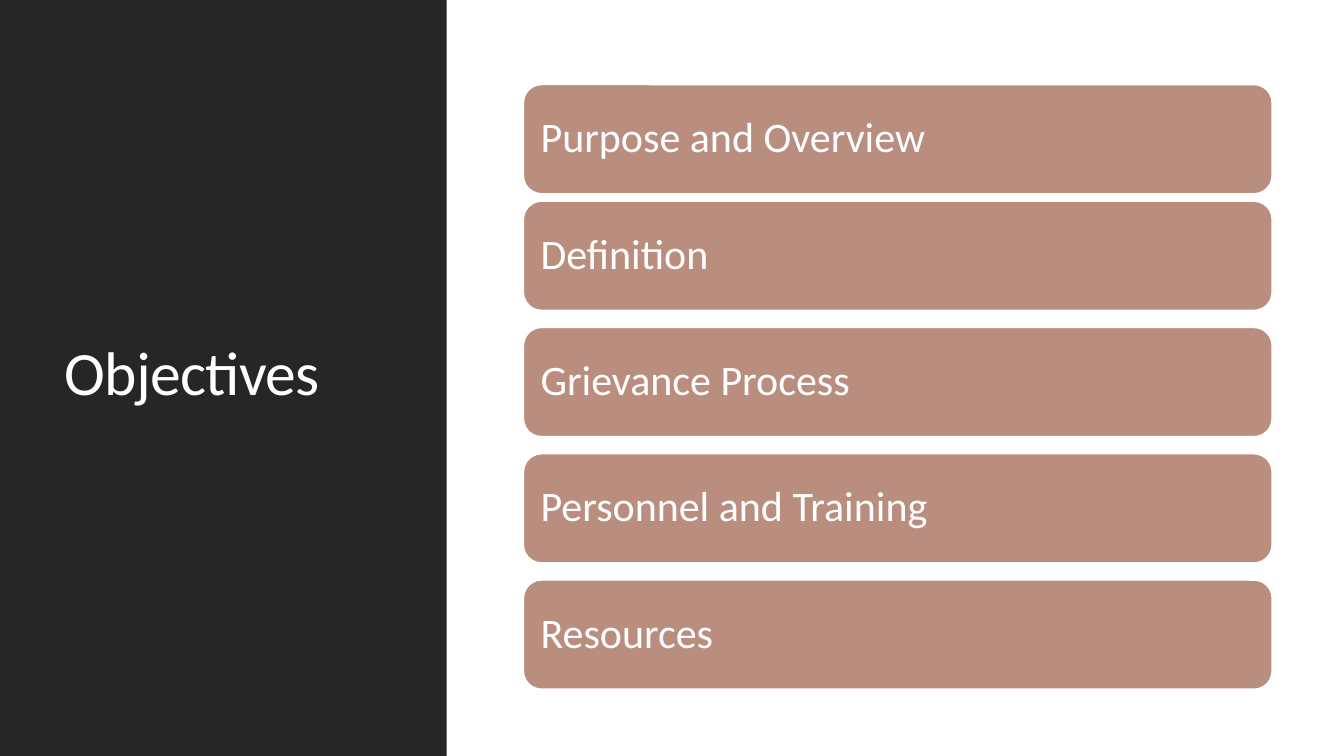
"""Build the Objectives slide: a dark title panel beside five rounded bars."""
from pptx import Presentation
from pptx.dml.color import RGBColor
from pptx.enum import shapes, text
from pptx.util import Pt

TITLE = "Objectives"
OBJECTIVES = [
    "Purpose and Overview",
    "Definition",
    "Grievance Process",
    "Personnel and Training",
    "Resources",
]
COLORS = {"panel": "262626", "bar": "BA8E7F", "white": "FFFFFF"}
FONT = "Calibri"
SLIDE_W, SLIDE_H = 960, 540
PANEL_W = 319
BAR_X, BAR_W, BAR_H = 373.8, 535, 78.2
FIRST_Y, SECOND_Y, PITCH = 60.3, 143.6, 90.2


def color(name):
    return RGBColor.from_string(COLORS[name])


def add_box(s, kind, x, y, w, h, fill, line=None):
    sp = s.shapes.add_shape(kind, Pt(x), Pt(y), Pt(w), Pt(h))
    sp.shadow.inherit = False
    sp.fill.solid()
    sp.fill.fore_color.rgb = color(fill)
    if line:
        sp.line.color.rgb = color(line)
        sp.line.width = Pt(1.25)
    else:
        sp.line.fill.background()
    return sp


def write(sp, content, size, inset, spacing=0):
    tf = sp.text_frame
    tf.word_wrap = True
    tf.auto_size = text.MSO_AUTO_SIZE.NONE
    tf.vertical_anchor = text.MSO_ANCHOR.MIDDLE
    tf.margin_left = tf.margin_right = Pt(inset)
    p = tf.paragraphs[0]
    p.alignment = text.PP_ALIGN.LEFT
    p.line_spacing = 0.9
    r = p.add_run()
    r.text = content
    r.font.name = FONT
    r.font.size = Pt(size)
    r.font.color.rgb = color("white")
    if spacing:
        r._r.get_or_add_rPr().set("spc", str(round(spacing * 100)))


def main():
    prs = Presentation()
    prs.slide_width, prs.slide_height = Pt(SLIDE_W), Pt(SLIDE_H)
    s = prs.slides.add_slide(prs.slide_layouts[5])

    panel = add_box(s, shapes.MSO_SHAPE.RECTANGLE, 0, 0, PANEL_W, SLIDE_H, "panel")
    title = s.shapes.title
    panel.element.addnext(title.element)
    title.left, title.top, title.width, title.height = Pt(39), Pt(41), Pt(243), Pt(454)
    write(title, TITLE, 44, inset=7.2, spacing=-0.5)

    for i, objective in enumerate(OBJECTIVES):
        y = SECOND_Y + (i - 1) * PITCH if i else FIRST_Y
        bar = add_box(s, shapes.MSO_SHAPE.ROUNDED_RECTANGLE,
                      BAR_X, y, BAR_W, BAR_H, "bar", line="white")
        write(bar, objective, 30, inset=8.6)

    prs.save("out.pptx")


if __name__ == "__main__":
    main()
